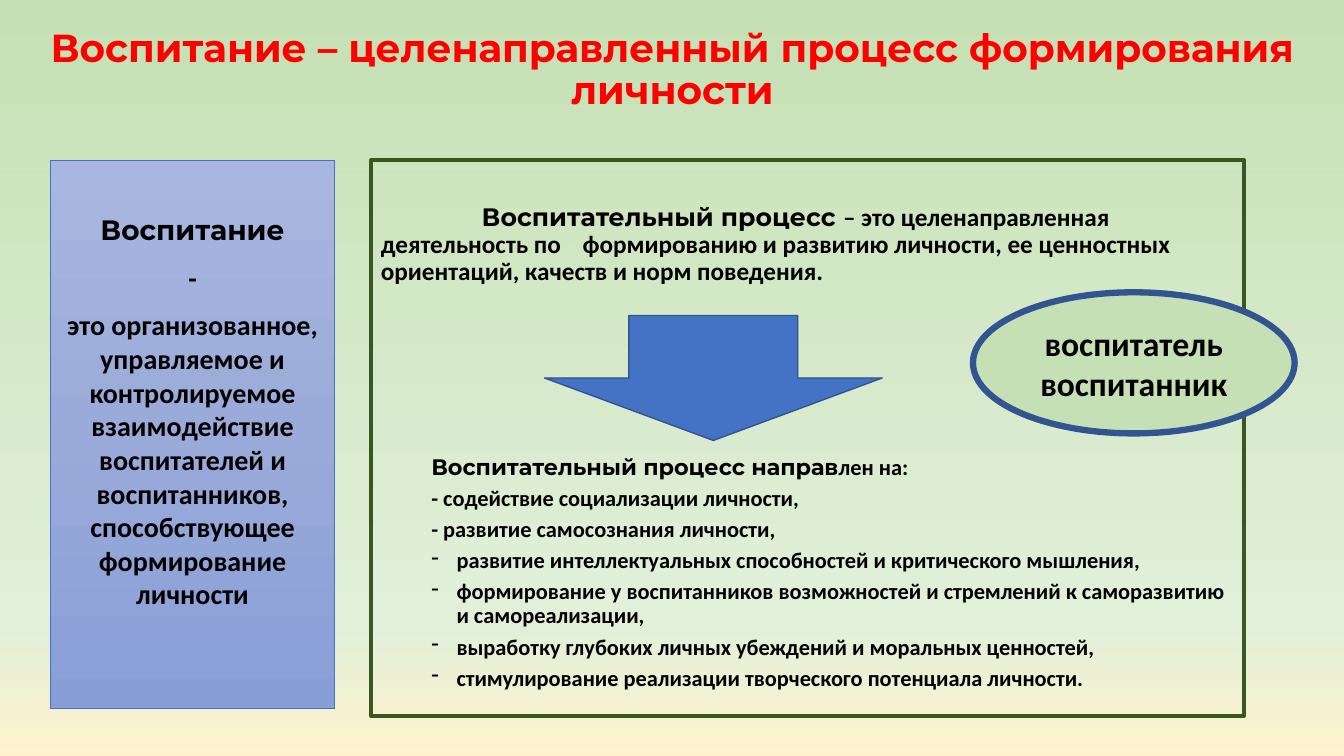
from lxml import etree
from pptx import Presentation
from pptx.dml.color import RGBColor
from pptx.enum.shapes import MSO_SHAPE
from pptx.enum.text import MSO_ANCHOR, MSO_AUTO_SIZE, PP_ALIGN
from pptx.oxml.ns import qn
from pptx.util import Inches, Pt

RECT, ARROW, OVAL = MSO_SHAPE.RECTANGLE, MSO_SHAPE.DOWN_ARROW, MSO_SHAPE.OVAL
TOP, MID = MSO_ANCHOR.TOP, MSO_ANCHOR.MIDDLE
LEFT, CENTER = PP_ALIGN.LEFT, PP_ALIGN.CENTER
HEAD, BODY = "Montserrat", "Calibri"
COLORS = {
    "title": "FF0000", "text": "000000", "blue": "4472C4", "navy": "325491",
    "green": "385723", "leaf": "C5E0B4",
}
SKY = [(0, "C5E0B4"), (83, "E2F0D9"), (100, "FFF2CC")]
PANEL = [(0, "A8B7DF"), (50, "9AABD9"), (100, "889ED7")]


def blend(fill, root, stops):
    """Fill from top to bottom through the given stops."""
    fill.gradient()
    fill.gradient_angle = 270
    group = next(root.iter(qn("a:gsLst")))
    for old in list(group):
        group.remove(old)
    for place, tone in stops:
        stop = etree.SubElement(group, qn("a:gs"), pos=str(place * 1000))
        etree.SubElement(stop, qn("a:srgbClr"), val=tone)


def write(frame, paras, color="text"):
    """Fill a frame with paragraphs of (format, runs of text, font, size)."""
    for i, (form, runs) in enumerate(paras):
        para = frame.paragraphs[0] if i == 0 else frame.add_paragraph()
        for name, value in form.items():
            setattr(para, name, value)
        for text, font, size in runs:
            run = para.add_run()
            run.text = text
            look = {"name": font, "size": Pt(size), "bold": True}
            for name, value in look.items():
                setattr(run.font, name, value)
            run.font.color.rgb = RGBColor.from_string(COLORS[color])


deck = Presentation()
deck.slide_width, deck.slide_height = Inches(13.33), Inches(7.5)
slide = deck.slides.add_slide(deck.slide_layouts[5])
blend(slide.background.fill, slide.element, SKY)

# Title
title = slide.shapes.title
spot = {"left": 0.21, "top": 0.4, "width": 12.92, "height": 0.7}
for name, value in spot.items():
    setattr(title, name, Inches(value))
setup = {"word_wrap": True, "auto_size": MSO_AUTO_SIZE.NONE, "vertical_anchor": MID,
         "margin_top": 0, "margin_bottom": Inches(0.1)}
for name, value in setup.items():
    setattr(title.text_frame, name, value)
write(title.text_frame, [
    ({"alignment": CENTER, "line_spacing": 0.9},
     [("Воспитание – целенаправленный процесс формирования личности", HEAD, 27.9)]),
], "title")

# Shapes: kind, place, fill, line, line width, anchor, top margin
parts = {
    "term": (RECT, (0.5, 1.59, 2.82, 5.44), None, "blue", 0.5, TOP, 0.52),
    "process": (RECT, (3.68, 1.59, 8.66, 5.51), None, "green", 3, TOP, 0.44),
    "arrow": (ARROW, (5.4, 3.13, 3.35, 1.24), "blue", "navy", 1, MID, 0.05),
    "people": (OVAL, (9.65, 2.9, 3.19, 1.4), "leaf", "navy", 4.5, MID, 0.05),
}
frames = {}
for key, (kind, place, fill, line, width, anchor, gap) in parts.items():
    shape = slide.shapes.add_shape(kind, *map(Inches, place))
    shape.shadow.inherit = False
    shape.line.color.rgb = RGBColor.from_string(COLORS[line])
    shape.line.width = Pt(width)
    if fill:
        shape.fill.solid()
        shape.fill.fore_color.rgb = RGBColor.from_string(COLORS[fill])
    elif key == "term":
        blend(shape.fill, shape.element, PANEL)
    else:
        shape.fill.background()
    frames[key] = shape.text_frame
    setup = {"word_wrap": True, "vertical_anchor": anchor, "margin_top": Inches(gap)}
    for name, value in setup.items():
        setattr(shape.text_frame, name, value)

# Left panel
first = {"alignment": CENTER}
after = {"alignment": CENTER, "space_before": Pt(10)}
write(frames["term"], [
    (first, [("Воспитание", HEAD, 20)]),
    (after, [("-", BODY, 20)]),
    (after, [("это организованное, управляемое и контролируемое взаимодействие "
              "воспитателей и воспитанников, способствующее формирование личности",
              BODY, 20)]),
])

# Right panel
plain = {"alignment": LEFT, "line_spacing": 0.9, "space_before": Pt(5)}
aims = [
    "- содействие социализации личности,",
    "- развитие самосознания личности,",
    "развитие интеллектуальных способностей и критического мышления,",
    "формирование у воспитанников возможностей и стремлений к саморазвитию "
    "и самореализации,",
    "выработку глубоких личных убеждений и моральных ценностей,",
    "стимулирование реализации творческого потенциала личности.",
]
write(frames["process"], [
    (plain | {"space_before": Pt(0)},
     [("Воспитательный процесс ", HEAD, 18),
      ("– это целенаправленная деятельность по \tформированию и развитию личности, "
       "ее ценностных ориентаций, качеств и норм поведения.", BODY, 18)]),
    (plain | {"space_before": Pt(121)},
     [("Воспитательный процесс направ", HEAD, 16), ("лен на:", BODY, 16)]),
] + [(plain, [(aim, BODY, 16)]) for aim in aims])

# Indents and dash bullets
for i, para in enumerate(frames["process"].paragraphs):
    dash = i > 3
    left, indent = (0, 1) if i == 0 else (0.75, -0.25) if dash else (0.5, 0)
    props = para._p.get_or_add_pPr()
    props.set("marL", str(Inches(left)))
    props.set("indent", str(Inches(indent)))
    if dash:
        etree.SubElement(props, qn("a:buFontTx"))
        etree.SubElement(props, qn("a:buChar"), char="-")

# Oval
write(frames["people"], [(first, [("воспитатель воспитанник", BODY, 24)])])

deck.save("out.pptx")
